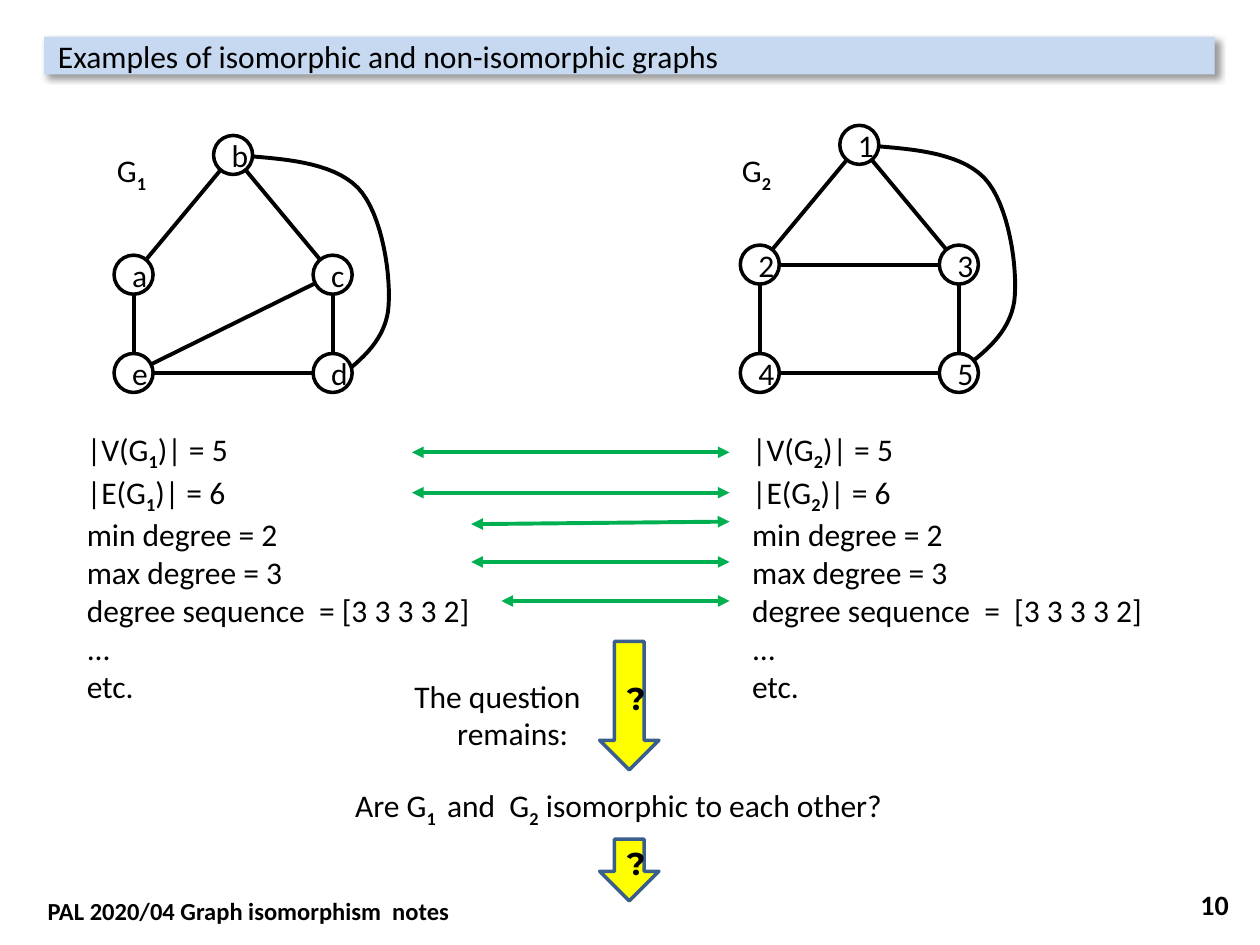
"""Build a slide comparing two graphs and their isomorphism invariants."""
from dataclasses import dataclass

from lxml import etree
from pptx import Presentation
from pptx import util as u
from pptx.dml.color import RGBColor
from pptx.enum import shapes, text
from pptx.oxml import ns

BLACK = RGBColor(0x00, 0x00, 0x00)
WHITE = RGBColor(0xFF, 0xFF, 0xFF)
GREEN = RGBColor(0x00, 0xB0, 0x50)
YELLOW = RGBColor(0xFF, 0xFF, 0x00)
BLUE = RGBColor(0x3A, 0x5F, 0x8C)
PALE_BLUE = RGBColor(0xC6, 0xD9, 0xF1)

NODE_SIZE = 0.31
HALF_WIDTH = 0.79
BASE_Y = 2.96
CURVE_STEPS = 16
CURVE = [
    [(0, 0), (0.39, 0.03), (0.78, 0.05), (0.99, 0.26)],
    [(0.99, 0.26), (1.19, 0.47), (1.26, 0.99), (1.23, 1.24)],
    [(1.23, 1.24), (1.19, 1.5), (0.99, 1.65), (0.78, 1.81)],
]


@dataclass
class Graph:
    """Top, left, right, bottom-left and bottom-right labels, with edges."""
    index: int
    labels: str
    edges: list[str]
    apex: tuple[float, float]
    label_x: float
    facts_x: float
    facts_width: float
    sequence: str

    def nodes(self) -> dict[str, tuple[float, float]]:
        x, y = self.apex
        left, right = x - HALF_WIDTH, x + HALF_WIDTH
        spots = [(x, y), (left, y + 0.95), (right, y + 0.95), (left, BASE_Y), (right, BASE_Y)]
        return dict(zip(self.labels, spots))


@dataclass
class Arrow:
    x: float
    y: float
    end_y: float


@dataclass
class Question:
    y: float
    height: float


GRAPHS = [
    Graph(1, "baced", ["ba", "bc", "ae", "cd", "ed", "ec"], (1.85, 1.23),
          0.83, 0.59, 3.39, "= [3 3 3 3 2]"),
    Graph(2, "12345", ["12", "13", "23", "24", "35", "45"], (6.82, 1.15),
          5.79, 5.87, 3.78, "=  [3 3 3 3 2]"),
]
ARROWS = [
    Arrow(3.27, 3.59, 3.59),
    Arrow(3.27, 3.91, 3.91),
    Arrow(3.74, 4.16, 4.14),
    Arrow(3.74, 4.46, 4.46),
    Arrow(3.98, 4.77, 4.77),
]
QUESTIONS = [Question(5.09, 1.02), Question(6.66, 0.49)]


def write(sp, lines: list[str], size=18, font="Calibri", bold=False,
          align=text.PP_ALIGN.LEFT, anchor=text.MSO_ANCHOR.TOP, grow=False) -> None:
    """Write one paragraph per line; text between tildes is a bold subscript."""
    tf = sp.text_frame
    tf.word_wrap = True
    tf.vertical_anchor = anchor
    if grow:
        tf.auto_size = text.MSO_AUTO_SIZE.SHAPE_TO_FIT_TEXT
    for i, line in enumerate(lines):
        p = tf.add_paragraph() if i else tf.paragraphs[0]
        p.alignment = align
        for j, part in enumerate(line.split("~")):
            if not part:
                continue
            r = p.add_run()
            r.text = part
            r.font.name = font
            r.font.size = u.Pt(size)
            r.font.bold = bold or j % 2 == 1
            r.font.color.rgb = BLACK
            if j % 2:
                r._r.get_or_add_rPr().set("baseline", "-25000")


def add_text(s, x: float, y: float, w: float, h: float, lines: list[str], **fmt):
    sp = s.shapes.add_textbox(u.Inches(x), u.Inches(y), u.Inches(w), u.Inches(h))
    write(sp, lines, **fmt)
    return sp


def add_box(s, kind, x: float, y: float, w: float, h: float, label: str, fill, line=None, **fmt):
    sp = s.shapes.add_shape(kind, u.Inches(x), u.Inches(y), u.Inches(w), u.Inches(h))
    sp.shadow.inherit = False
    sp.fill.solid()
    sp.fill.fore_color.rgb = fill
    if line is None:
        sp.line.fill.background()
    else:
        sp.line.color.rgb = line
        sp.line.width = u.Pt(2)
    write(sp, [label], anchor=text.MSO_ANCHOR.MIDDLE, **fmt)
    return sp


def add_line(s, start: tuple[float, float], end: tuple[float, float], color=BLACK, heads=False) -> None:
    sp = s.shapes.add_connector(shapes.MSO_CONNECTOR.STRAIGHT, *map(u.Inches, start + end))
    sp.line.color.rgb = color
    sp.line.width = u.Pt(2.25)
    props = sp._element.spPr
    if heads:
        for tag in ("a:headEnd", "a:tailEnd"):
            etree.SubElement(props.find(ns.qn("a:ln")), ns.qn(tag), type="triangle")
    etree.SubElement(props, ns.qn("a:effectLst"))


def add_curve(s, origin: tuple[float, float]) -> None:
    """Draw the curved edge as finely sampled cubic segments."""
    points = [origin]
    for segment in CURVE:
        for step in range(1, CURVE_STEPS + 1):
            t = step / CURVE_STEPS
            weights = ((1 - t) ** 3, 3 * t * (1 - t) ** 2, 3 * t * t * (1 - t), t ** 3)
            points.append(tuple(origin[axis] + sum(k * pt[axis] for k, pt in zip(weights, segment))
                                for axis in (0, 1)))
    emu = [(u.Inches(x), u.Inches(y)) for x, y in points]
    builder = s.shapes.build_freeform(*emu[0])
    builder.add_line_segments(emu[1:], close=False)
    sp = builder.convert_to_shape()
    sp.shadow.inherit = False
    sp.fill.background()
    sp.line.color.rgb = BLACK
    sp.line.width = u.Pt(2.25)


def add_graph(s, graph: Graph) -> None:
    nodes = graph.nodes()
    add_curve(s, graph.apex)
    for start, end in graph.edges:
        add_line(s, nodes[start], nodes[end])
    for label, (x, y) in nodes.items():
        add_box(s, shapes.MSO_SHAPE.OVAL, x - NODE_SIZE / 2, y - NODE_SIZE / 2,
                NODE_SIZE, NODE_SIZE, label, WHITE, BLACK, align=text.PP_ALIGN.CENTER)
    name = f"G~{graph.index}~"
    add_text(s, graph.label_x, 1.15, 0.55, 0.4, [name], grow=True)
    facts = [f"|V({name})| = 5", f"|E({name})| = 6", "min degree = 2", "max degree = 3",
             f"degree sequence  {graph.sequence}", "...", "etc."]
    add_text(s, graph.facts_x, 3.36, graph.facts_width, 2.22, facts, grow=True)


def add_title(s, title: str) -> None:
    sp = add_box(s, shapes.MSO_SHAPE.RECTANGLE, 0.35, 0.29, 9.29, 0.3, title, PALE_BLUE, grow=True)
    tf = sp.text_frame
    tf.margin_left = u.Inches(0.11)
    tf.margin_top = tf.margin_right = tf.margin_bottom = 0
    effects = sp._element.spPr.find(ns.qn("a:effectLst"))
    shadow = etree.SubElement(effects, ns.qn("a:outerShdw"), blurRad=str(u.Pt(4)),
                              dist=str(u.Pt(3)), dir="2700000", algn="tl", rotWithShape="0")
    color = etree.SubElement(shadow, ns.qn("a:srgbClr"), val=str(BLACK))
    etree.SubElement(color, ns.qn("a:alpha"), val="40000")


def main() -> None:
    prs = Presentation()
    prs.slide_width, prs.slide_height = u.Inches(10), u.Inches(7.5)
    s = prs.slides.add_slide(prs.slide_layouts[6])
    for graph in GRAPHS:
        add_graph(s, graph)
    for arrow in ARROWS:
        add_line(s, (arrow.x, arrow.y), (5.79, arrow.end_y), GREEN, heads=True)
    add_text(s, 2.72, 6.19, 4.88, 0.4,
             ["Are G~1 ~ and  G~2~ isomorphic to each other?"], grow=True)
    for question in QUESTIONS:
        add_box(s, shapes.MSO_SHAPE.DOWN_ARROW, 4.76, question.y, 0.47, question.height, "?",
                YELLOW, BLUE, font="Montserrat", bold=True, align=text.PP_ALIGN.CENTER)
    remark = add_text(s, 3.19, 5.32, 1.65, 0.71, ["The question", "remains:"], grow=True)
    remark.text_frame.paragraphs[1]._p.get_or_add_pPr().set("marL", str(u.Inches(0.34)))
    add_text(s, 7.52, 6.98, 2.33, 0.4, ["10"], size=16, bold=True,
             align=text.PP_ALIGN.RIGHT, anchor=text.MSO_ANCHOR.MIDDLE)
    add_text(s, 0.28, 7.06, 9.37, 0.34, ["PAL 2020/04 Graph isomorphism  notes"],
             size=14, bold=True, grow=True)
    add_title(s, "Examples of isomorphic and non-isomorphic graphs")
    prs.save("out.pptx")


if __name__ == "__main__":
    main()
